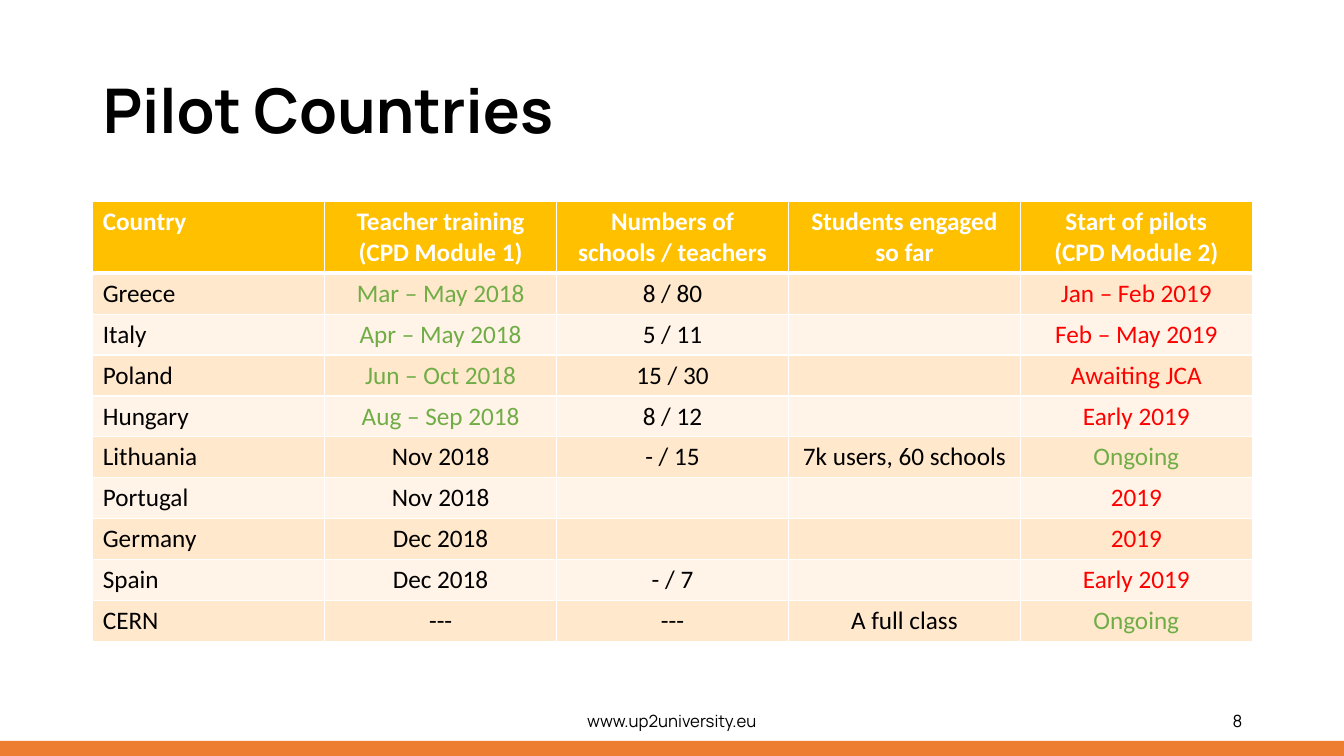
from dataclasses import dataclass

from lxml import etree
from pptx import Presentation
from pptx.dml.color import RGBColor
from pptx.enum.shapes import MSO_SHAPE
from pptx.enum.text import MSO_ANCHOR, PP_ALIGN
from pptx.oxml.ns import qn
from pptx.util import Inches, Pt

LEFT, CENTER, RIGHT = PP_ALIGN.LEFT, PP_ALIGN.CENTER, PP_ALIGN.RIGHT
MIDDLE = MSO_ANCHOR.MIDDLE
RECTANGLE = MSO_SHAPE.RECTANGLE


@dataclass(frozen=True)
class Theme:
    heading_font: str = "Manrope"
    table_font: str = "Calibri"
    title_size: int = 44
    table_size: int = 18
    footer_size: int = 12
    text: str = "000000"
    white: str = "FFFFFF"
    header: str = "FFC000"
    bands: tuple = ("FFE8CC", "FFF4E7")
    done: str = "70AD47"
    pending: str = "FF0000"
    bar: str = "ED7D31"


theme = Theme()


def format_text(frame, font, size, color, align, bold=False):
    for paragraph in frame.paragraphs:
        paragraph.alignment = align
        for run in paragraph.runs:
            run.font.name = font
            run.font.size = Pt(size)
            run.font.bold = bold
            run.font.color.rgb = RGBColor.from_string(color)


def add_borders(cell, widths):
    """Draw white cell borders; widths maps a side (L, R, T, B) to points."""
    properties = cell._tc.get_or_add_tcPr()
    for side, width in widths.items():
        line = etree.SubElement(properties, qn(f"a:ln{side}"), w=str(Pt(width)))
        fill = etree.SubElement(line, qn("a:solidFill"))
        etree.SubElement(fill, qn("a:srgbClr"), val=theme.white)


deck = Presentation()
deck.slide_width, deck.slide_height = Inches(13.33), Inches(7.5)
slide = deck.slides.add_slide(deck.slide_layouts[5])
margin = Inches(0.92)
content_width = Inches(11.5)

# Bottom bar
bar_height = int(deck.slide_height * 0.02)
bar = slide.shapes.add_shape(RECTANGLE, 0, deck.slide_height - bar_height,
                             deck.slide_width, bar_height)
bar.shadow.inherit = False
bar.fill.solid()
bar.fill.fore_color.rgb = RGBColor.from_string(theme.bar)
bar.line.fill.background()

# Title
title = slide.shapes.title
title.left, title.top = margin, Inches(0.4)
title.width, title.height = Inches(10.08), Inches(1.45)
title.text_frame.text = "Pilot Countries"
title.text_frame.vertical_anchor = MIDDLE
title.text_frame.paragraphs[0].line_spacing = 0.9
format_text(title.text_frame, theme.heading_font, theme.title_size, theme.text, LEFT, True)

# Pilot table
headings = ("Country", "Teacher training\n(CPD Module 1)", "Numbers of\vschools / teachers",
            "Students engaged so far", "Start of pilots\v(CPD Module 2)")
pilots = (
    ("Greece", "Mar – May 2018", "8 / 80", "", "Jan – Feb 2019"),
    ("Italy", "Apr – May 2018", "5 / 11", "", "Feb – May 2019"),
    ("Poland", "Jun – Oct 2018", "15 / 30", "", "Awaiting JCA"),
    ("Hungary", "Aug – Sep 2018", "8 / 12", "", "Early 2019"),
    ("Lithuania", "Nov 2018", "- / 15", "7k users, 60 schools", "Ongoing"),
    ("Portugal", "Nov 2018", "", "", "2019"),
    ("Germany", "Dec 2018", "", "", "2019"),
    ("Spain", "Dec 2018", "- / 7", "", "Early 2019"),
    ("CERN", "---", "---", "A full class", "Ongoing"),
)
TRAINING, START = 1, 4
rows = (headings, *pilots)
header_height, row_height = Inches(0.7), Inches(0.406)
table = slide.shapes.add_table(len(rows), len(headings), margin, Inches(2), content_width,
                               header_height + row_height * len(pilots)).table
for column in table.columns:
    column.width = content_width // len(headings)

for r, values in enumerate(rows):
    is_header = r == 0
    table.rows[r].height = header_height if is_header else row_height
    for c, value in enumerate(values):
        if is_header:
            color = theme.white
        elif value == "Ongoing" or (c == TRAINING and "–" in value):
            color = theme.done
        elif c == START:
            color = theme.pending
        else:
            color = theme.text
        cell = table.cell(r, c)
        cell.text_frame.text = value
        format_text(cell.text_frame, theme.table_font, theme.table_size, color,
                    CENTER if c else LEFT, is_header)
        add_borders(cell, {"L": 1, "R": 1, "T": 3 if r == 1 else 1, "B": 3 if is_header else 1})
        cell.fill.solid()
        cell.fill.fore_color.rgb = RGBColor.from_string(
            theme.header if is_header else theme.bands[(r - 1) % 2])

# Footer: centred address, page number ending at the right margin
address_width, number_width = Inches(4.5), Inches(3)
footers = (
    ("www.up2university.eu", (deck.slide_width - address_width) // 2, address_width, CENTER),
    ("8", margin + content_width - number_width, number_width, RIGHT),
)
for label, left, width, align in footers:
    footer = slide.shapes.add_textbox(left, Inches(6.95), width, Inches(0.4)).text_frame
    footer.word_wrap = True
    footer.vertical_anchor = MIDDLE
    footer.text = label
    format_text(footer, theme.heading_font, theme.footer_size, theme.text, align)

deck.save("out.pptx")
